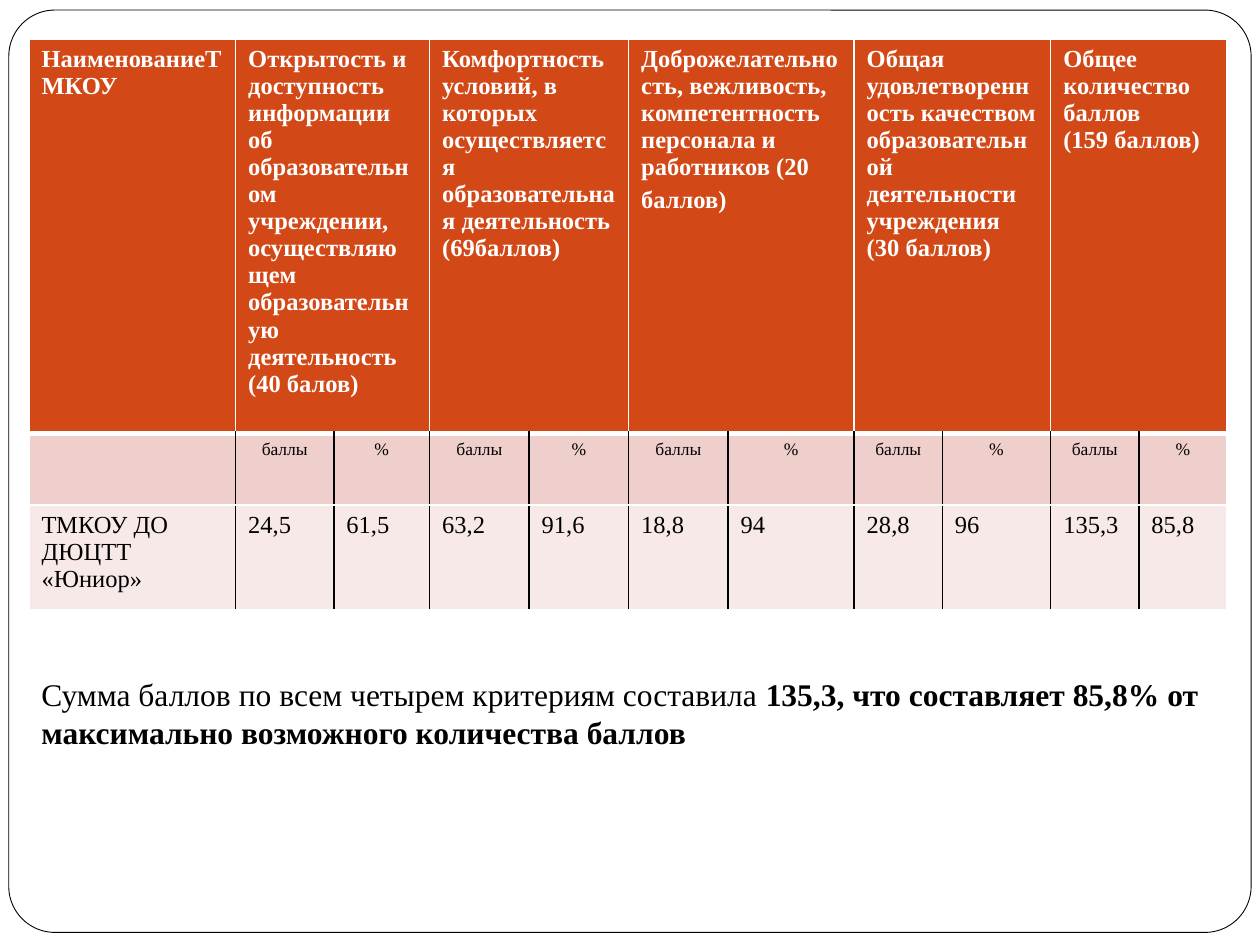
from lxml.etree import SubElement
from pptx import Presentation
from pptx.dml.color import RGBColor
from pptx.enum.shapes import MSO_SHAPE
from pptx.enum.text import PP_ALIGN
from pptx.oxml.ns import qn
from pptx.util import Inches, Pt

FONT = "Times New Roman"
BLACK = RGBColor(0x00, 0x00, 0x00)
WHITE = RGBColor(0xFF, 0xFF, 0xFF)
HEADER_FILL = RGBColor(0xD3, 0x48, 0x17)
UNITS_FILL = RGBColor(0xEF, 0xCF, 0xCC)
SCORES_FILL = RGBColor(0xF7, 0xE9, 0xE8)
ROW_FILLS = [HEADER_FILL, UNITS_FILL, SCORES_FILL]

COLUMN_WIDTHS = [1.64, 0.78, 0.76, 0.79, 0.79, 0.79, 1, 0.7, 0.86, 0.7, 0.7]
ROW_HEIGHTS = [3.13, 0.57, 0.83]

# Each criterion is a list of paragraphs; it spans a points and a percent column.
CRITERIA = [
    ["Открытость и доступность информации об образовательном учреждении, "
     "осуществляющем образовательную деятельность", "(40 балов)"],
    ["Комфортность условий, в которых осуществляется образовательная деятельность",
     "(69баллов)"],
    ["Доброжелательность, вежливость, компетентность персонала и работников (20 баллов) "],
    ["Общая удовлетворенность качеством образовательной деятельности учреждения (30 баллов)"],
    ["Общее количество баллов", "(159 баллов)"],
]
SCORES = ["ТМКОУ ДО ДЮЦТТ «Юниор»", "24,5", "61,5", "63,2", "91,6", "18,8",
          "94", "28,8", "96", "135,3", "85,8"]


def add_run(paragraph, text, size, color=BLACK, bold=False):
    run = paragraph.add_run()
    run.text = text
    run.font.name = FONT
    run.font.size = Pt(size)
    run.font.bold = bold
    run.font.color.rgb = color


def write_cell(cell, lines, size, color=BLACK, bold=False, alignment=PP_ALIGN.LEFT):
    for index, line in enumerate(lines):
        frame = cell.text_frame
        paragraph = frame.paragraphs[0] if index == 0 else frame.add_paragraph()
        paragraph.alignment = alignment
        add_run(paragraph, line, size, color, bold)


def set_border(cell, side, color, width):
    properties = cell._tc.get_or_add_tcPr()
    line = SubElement(properties, qn(f"a:ln{side}"), w=str(Pt(width)))
    fill = SubElement(line, qn("a:solidFill"))
    SubElement(fill, qn("a:srgbClr"), val=str(color))


def style_cell(cell, row, column):
    """Fill a cell; inner vertical rules are black below the header, all others white."""
    last_column = len(COLUMN_WIDTHS) - 1
    set_border(cell, "L", WHITE if row == 0 or column == 0 else BLACK, 1)
    set_border(cell, "R", WHITE if row == 0 or column == last_column else BLACK, 1)
    set_border(cell, "T", WHITE, 3 if row == 1 else 1)
    set_border(cell, "B", WHITE, 3 if row == 0 else 1)
    cell.fill.solid()
    cell.fill.fore_color.rgb = ROW_FILLS[row]


def add_frame(slide):
    frame = slide.shapes.add_shape(MSO_SHAPE.ROUNDED_RECTANGLE, Inches(0.07),
                                   Inches(0.08), Inches(9.86), Inches(7.32))
    frame.adjustments[0] = 0.05
    frame.shadow.inherit = False
    frame.fill.solid()
    frame.fill.fore_color.rgb = WHITE
    frame.line.color.rgb = BLACK
    frame.line.width = Pt(0.5)


def add_score_table(slide):
    table = slide.shapes.add_table(
        len(ROW_HEIGHTS), len(COLUMN_WIDTHS), Inches(0.23), Inches(0.31),
        Inches(sum(COLUMN_WIDTHS)), Inches(sum(ROW_HEIGHTS))).table
    for column, width in zip(table.columns, COLUMN_WIDTHS):
        column.width = Inches(width)
    for row, height in zip(table.rows, ROW_HEIGHTS):
        row.height = Inches(height)
    for row in range(len(ROW_HEIGHTS)):
        for column in range(len(COLUMN_WIDTHS)):
            style_cell(table.cell(row, column), row, column)

    write_cell(table.cell(0, 0), ["НаименованиеТМКОУ"], 14, WHITE, True)
    for index, lines in enumerate(CRITERIA):
        points = 1 + 2 * index
        header = table.cell(0, points)
        header.merge(table.cell(0, points + 1))
        write_cell(header, lines, 14, WHITE, True)
        for offset, unit in enumerate(["баллы", "%"]):
            write_cell(table.cell(1, points + offset), [unit], 10,
                       alignment=PP_ALIGN.CENTER)
    # The larger closing tab makes the last line of this heading taller.
    add_run(table.cell(0, 5).text_frame.paragraphs[0], "\t", 18, WHITE, True)
    for column, score in enumerate(SCORES):
        write_cell(table.cell(2, column), [score], 14)


def add_summary(slide):
    box = slide.shapes.add_textbox(Inches(0.23), Inches(5.31), Inches(9.38), Inches(0.71))
    box.text_frame.word_wrap = True
    paragraph = box.text_frame.paragraphs[0]
    paragraph.alignment = PP_ALIGN.JUSTIFY
    add_run(paragraph, "Сумма баллов по всем четырем критериям составила ", 18)
    add_run(paragraph, "135,3, что составляет 85,8% от максимально возможного "
            "количества баллов", 18, bold=True)


def main():
    presentation = Presentation()
    presentation.slide_width = Inches(10)
    presentation.slide_height = Inches(7.5)
    slide = presentation.slides.add_slide(presentation.slide_layouts[6])
    add_frame(slide)
    add_score_table(slide)
    add_summary(slide)
    presentation.save("out.pptx")


if __name__ == "__main__":
    main()
